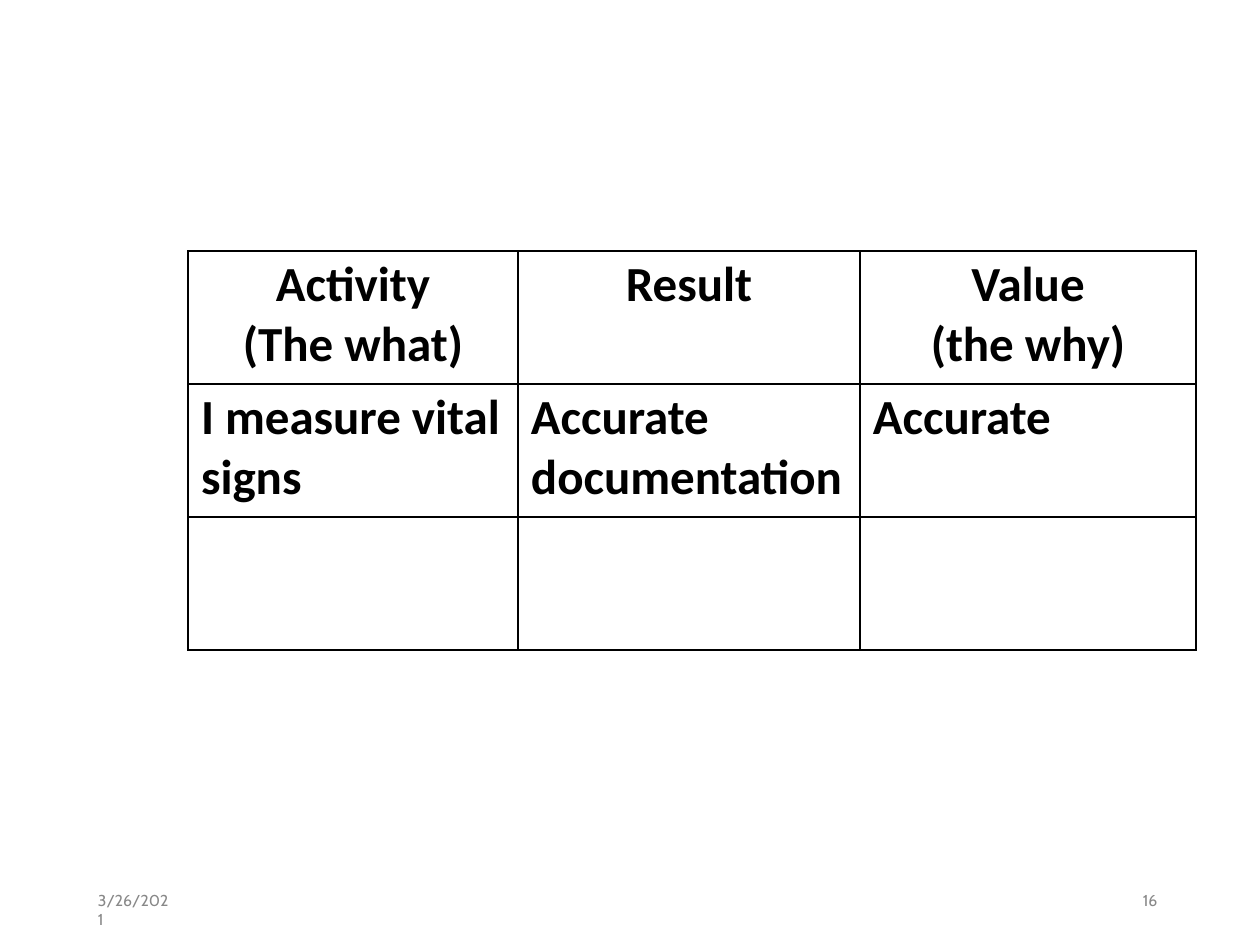
import lxml.etree
import pptx
import pptx.dml.color
import pptx.enum.text
import pptx.oxml.ns
import pptx.util

PX = 914400 // 126
BLACK = pptx.dml.color.RGBColor(0x00, 0x00, 0x00)
GREY = pptx.dml.color.RGBColor(0x88, 0x88, 0x88)
ALIGN = pptx.enum.text.PP_ALIGN

# Each cell is a list of lines
ROWS = [
    [["Activity", "(The what)"], ["Result"], ["Value", "(the why)"]],
    [["I measure vital signs"], ["Accurate documentation"], ["Accurate"]],
    [[], [], []],
]
TABLE_LEFT, TABLE_TOP = 188, 251
COL_WIDTHS = [330, 342, 336]
ROW_HEIGHT = 133
CELL_INDENT = 13

# text, left, top, width, height, indent
FOOTERS = [
    ("3/26/2021", 97, 890, 76, 23, 1),
    ("16", 1138, 890, 64, 38, 5),
]


def px(n):
    return pptx.util.Emu(n * PX)


def add_run(p, text, font, size, color, bold=False):
    r = p.add_run()
    r.text = text
    r.font.name = font
    r.font.size = pptx.util.Pt(size)
    r.font.color.rgb = color
    r.font.bold = bold


def set_borders(cell, color, width):
    tcPr = cell._tc.get_or_add_tcPr()
    qn = pptx.oxml.ns.qn
    for i, side in enumerate(("lnL", "lnR", "lnT", "lnB")):
        ln = lxml.etree.Element(qn(f"a:{side}"), w=str(pptx.util.Pt(width)))
        fill = lxml.etree.SubElement(ln, qn("a:solidFill"))
        lxml.etree.SubElement(fill, qn("a:srgbClr"), val=str(color))
        tcPr.insert(i, ln)


def fill_cell(cell, lines, align):
    cell.margin_left = px(0 if align == ALIGN.CENTER else CELL_INDENT)
    cell.margin_right = cell.margin_bottom = 0
    cell.margin_top = px(3)
    cell.fill.background()
    set_borders(cell, BLACK, 1)
    p = cell.text_frame.paragraphs[0]
    p.alignment = align
    p.line_spacing = 1.01
    p.space_before = pptx.util.Pt(1.5)
    for i, line in enumerate(lines):
        if i:
            p.add_line_break()
        add_run(p, line, "Calibri", 28, BLACK, bold=True)


def add_grid(s):
    frame = s.shapes.add_table(
        len(ROWS), len(COL_WIDTHS), px(TABLE_LEFT), px(TABLE_TOP),
        px(sum(COL_WIDTHS)), px(ROW_HEIGHT * len(ROWS)))
    table = frame.table
    table.first_row = table.horz_banding = False
    for column, width in zip(table.columns, COL_WIDTHS):
        column.width = px(width)
    for i, row in enumerate(ROWS):
        table.rows[i].height = px(ROW_HEIGHT)
        align = ALIGN.LEFT if i else ALIGN.CENTER
        for j, lines in enumerate(row):
            fill_cell(table.cell(i, j), lines, align)


def add_footer(s, text, left, top, width, height, indent):
    sp = s.shapes.add_textbox(px(left), px(top), px(width), px(height))
    tf = sp.text_frame
    tf.word_wrap = True
    tf.margin_left = px(indent)
    tf.margin_top = px(1)
    tf.margin_right = tf.margin_bottom = 0
    p = tf.paragraphs[0]
    p.space_before = pptx.util.Pt(1)
    add_run(p, text, "Cabin", 9, GREY)


def main():
    prs = pptx.Presentation()
    prs.slide_width = pptx.util.Inches(10)
    prs.slide_height = pptx.util.Inches(7.5)
    s = prs.slides.add_slide(prs.slide_layouts[6])
    for footer in FOOTERS:
        add_footer(s, *footer)
    add_grid(s)
    prs.save("out.pptx")


if __name__ == "__main__":
    main()
